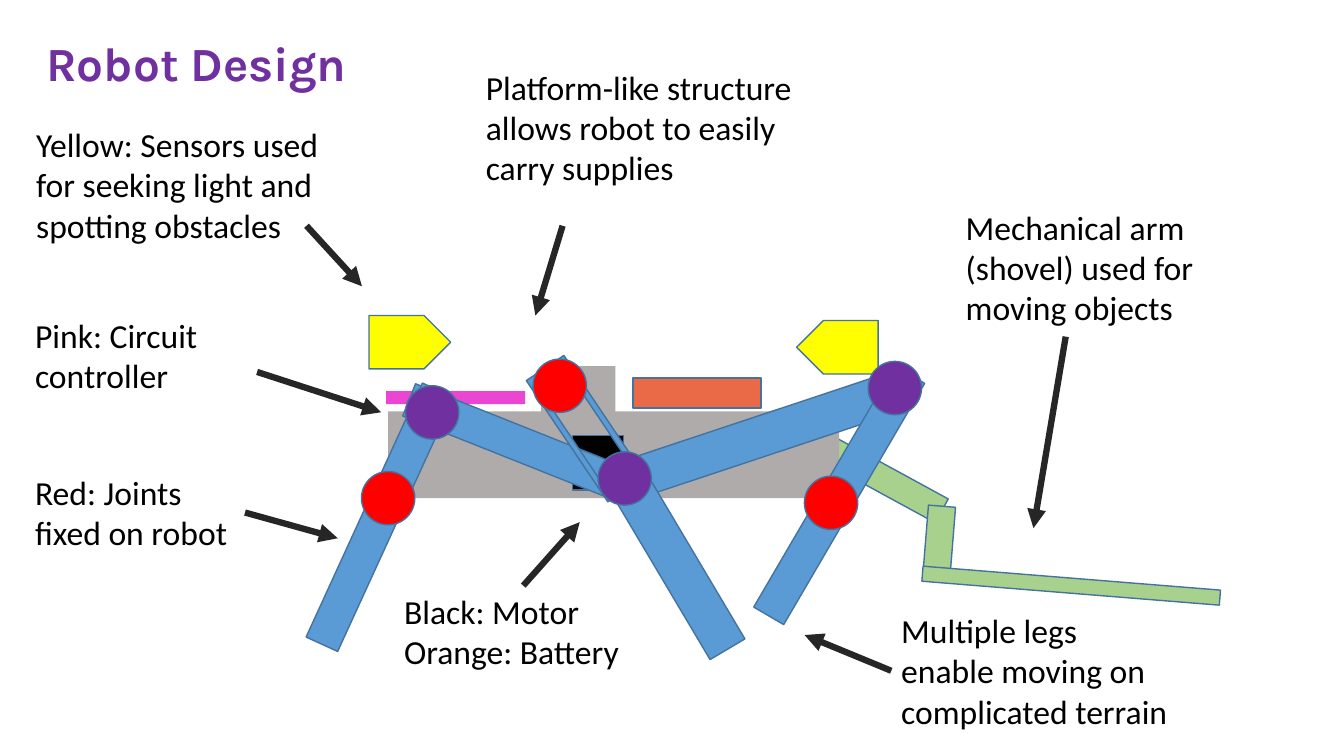
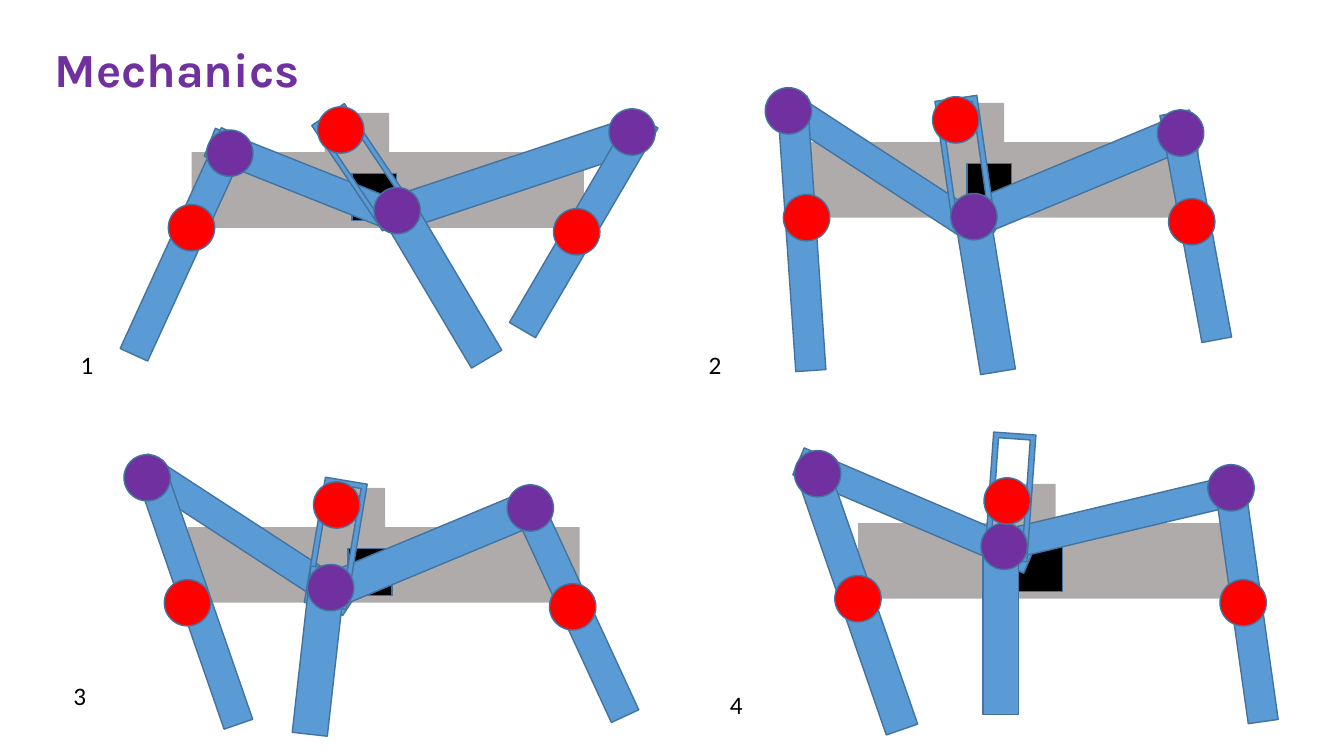
from lxml import etree
from pptx import Presentation
from pptx.dml.color import RGBColor
from pptx.enum.shapes import MSO_CONNECTOR, MSO_SHAPE
from pptx.enum.text import MSO_AUTO_SIZE, PP_ALIGN
from pptx.oxml.ns import qn
from pptx.util import Inches, Pt

COLORS = {
    "title": "7030A0", "text": "000000", "arrow": "262626", "outline": "43739E",
    "leg": "5B9BD5", "body": "AFABAB", "motor": "000000", "pivot": "7030A0",
    "joint": "FF0000", "sensor": "FFFF00", "controller": "EA46D3",
    "battery": "EA6946", "shovel": "A9D18E",
}
FORMATS = {
    "title": {"size": Pt(34), "name": "Karla", "bold": True},
    "label": {"size": Pt(24), "name": "Calibri"},
    "number": {"size": Pt(18), "name": "Calibri"},
}

# Robot measures, in inches from the top left corner of its body
BODY = (0, 0, 3.89, 0.75)
TOWER = (1.32, -0.39, 0.64, 0.51)
MOTOR = (1.59, 0.21, 0.44, 0.47)
FIXED_JOINTS = [(-0.23, 0.52), (3.59, 0.56), (1.25, -0.45)]
JOINT_SIZE = 0.46

# Each pose: limbs as (left, top, width, height, rotation), pivots as (left, top)
POSES = [
    {"left arm": (1.08, -0.81, 0.3, 2.26, 111.7),
     "right arm": (3.03, -0.94, 0.35, 2.32, 71.6),
     "slot": (1.51, -0.48, 0.39, 1.26, 326.1),
     "middle leg": (2.29, 0.37, 0.35, 1.81, 329.3), "hub": (1.81, 0.35),
     "right leg": (3.74, -0.48, 0.3, 2.41, 30.3), "right pivot": (4.14, -0.43),
     "left leg": (-0.22, -0.29, 0.3, 2.41, 24.6), "left pivot": (0.15, -0.22)},
    {"left arm": (0.63, -0.97, 0.29, 2.49, 123.1),
     "right arm": (2.43, -0.79, 0.35, 2.32, 67.4),
     "slot": (1.36, -0.44, 0.42, 1.26, 351.8),
     "middle leg": (1.59, 0.63, 0.35, 1.66, 350.7), "hub": (1.43, 0.51),
     "right leg": (3.71, -0.31, 0.3, 2.29, 349.5), "right pivot": (3.48, -0.32),
     "left leg": (-0.2, -0.45, 0.3, 2.72, 356.1), "left pivot": (-0.41, -0.54)},
    {"left arm": (0.43, -1.17, 0.29, 2.49, 123.1),
     "right arm": (2.17, -0.91, 0.35, 2.32, 67.4),
     "slot": (1.26, -0.47, 0.42, 1.26, 9.6),
     "middle leg": (1.13, 0.4, 0.35, 1.66, 6.4), "hub": (1.19, 0.37),
     "right leg": (3.71, -0.31, 0.3, 2.29, 335.2), "right pivot": (3.17, -0.42),
     "left leg": (-0.09, -0.69, 0.3, 2.72, 340.9), "left pivot": (-0.63, -0.72)},
    {"left arm": (0.41, -1.37, 0.29, 2.49, 113.1),
     "right arm": (2.43, -1.31, 0.3, 2.52, 76.6),
     "slot": (1.3, -0.89, 0.42, 1.26, 4.1),
     "middle leg": (1.24, 0.24, 0.35, 1.66, 0), "hub": (1.22, 0),
     "right leg": (3.71, -0.31, 0.3, 2.29, 352), "right pivot": (3.47, -0.58),
     "left leg": (-0.16, -0.52, 0.33, 2.64, 340.9), "left pivot": (-0.63, -0.72)},
]


def rgb(color):
    return RGBColor.from_string(COLORS[color])


class RobotDeck:
    """Holds the style and the current slide."""

    def __init__(self):
        self.presentation = Presentation()
        self.presentation.slide_width = Inches(13.33)
        self.presentation.slide_height = Inches(7.5)

    def add_slide(self, title, left, top, width):
        self.slide = self.presentation.slides.add_slide(self.presentation.slide_layouts[6])
        shape = self.text([title], left, top, width, 0.67, "title", "title")
        shape.text_frame.word_wrap = False
        shape.text_frame.paragraphs[0].alignment = PP_ALIGN.CENTER

    def text(self, lines, left, top, width, height, style="label", color="text"):
        shape = self.slide.shapes.add_textbox(*map(Inches, (left, top, width, height)))
        frame = shape.text_frame
        frame.word_wrap = True
        frame.auto_size = MSO_AUTO_SIZE.SHAPE_TO_FIT_TEXT
        for index, line in enumerate(lines):
            paragraph = frame.add_paragraph() if index else frame.paragraphs[0]
            run = paragraph.add_run()
            run.text = line
            for name, value in FORMATS[style].items():
                setattr(run.font, name, value)
            run.font.color.rgb = rgb(color)
        return shape

    def shape(self, kind, box, color, outlined=True, rotation=0, parent=None):
        shapes = (parent or self.slide).shapes
        shape = shapes.add_shape(kind, *map(Inches, box))
        shape.shadow.inherit = False
        shape.rotation = rotation
        shape.fill.solid()
        shape.fill.fore_color.rgb = rgb(color)
        if outlined:
            shape.line.color.rgb = rgb("outline")
            shape.line.width = Pt(1)
        else:
            shape.line.fill.background()
        return shape

    def arrow(self, start, end, label=None, side=None):
        connector = self.slide.shapes.add_connector(
            MSO_CONNECTOR.STRAIGHT, *map(Inches, start + end))
        if label is not None:
            connector.begin_connect(label, side)
        connector.line.color.rgb = rgb("arrow")
        connector.line.width = Pt(4.5)
        etree.SubElement(connector.line._get_or_add_ln(), qn("a:tailEnd"), type="triangle")
        etree.SubElement(connector._element.spPr, qn("a:effectLst"))

    def robot(self, pose, left, top, scale=1.0, group=None):
        group = group or self.slide.shapes.add_group_shape()

        def part(kind, box, color, outlined=True):
            x, y, width, height, *rotation = box
            placed = (left + x * scale, top + y * scale, width * scale, height * scale)
            self.shape(kind, placed, color, outlined, *rotation, parent=group)

        def joint(position, color):
            part(MSO_SHAPE.OVAL, position + (JOINT_SIZE, JOINT_SIZE), color)

        # Body and motor
        for box in (BODY, TOWER):
            part(MSO_SHAPE.RECTANGLE, box, "body", False)
        part(MSO_SHAPE.RECTANGLE, MOTOR, "motor")
        # Limbs and moving pivots, back to front
        for name, place in pose.items():
            if len(place) == 2:
                joint(place, "pivot")
            else:
                kind = MSO_SHAPE.FRAME if name == "slot" else MSO_SHAPE.RECTANGLE
                part(kind, place, "leg")
        # Joints fixed on the body
        for position in FIXED_JOINTS:
            joint(position, "joint")


def build_design(deck):
    deck.add_slide("Robot Design", 0.25, 0.29, 3.4)

    # Labels with their arrows; a side number joins the arrow to its label
    labels = [
        (["Red: Joints fixed on robot"], (0.25, 4.63, 2.18, 0.91),
         (2.44, 5.08), (3.35, 5.34), 3),
        (["Mechanical arm (shovel) used for moving objects"], (9.48, 2, 2.94, 1.31),
         (10.57, 3.34), (10.25, 5.24), None),
        (["Multiple legs enable moving on complicated terrain"], (8.84, 6, 2.91, 1.31),
         (8.84, 6.66), (7.98, 6.3), 1),
        (["Yellow: Sensors used for seeking light and spotting obstacles"],
         (0.26, 1.18, 3.12, 1.31), (3.04, 2.24), (3.59, 2.84), None),
        (["Black: Motor", "Orange: Battery"], (3.91, 5.81, 2.56, 0.91),
         (5.19, 5.81), (5.75, 5.18), 0),
        (["Pink: Circuit controller"], (0.25, 3.07, 2.13, 0.91),
         (2.55, 3.69), (3.78, 4.09), None),
        (["Platform-like structure allows robot to easily carry supplies"],
         (4.72, 0.61, 3.3, 1.31), (5.58, 2.24), (5.31, 3.13), None),
    ]
    for lines, box, start, end, side in labels:
        label = deck.text(lines, *box)
        deck.arrow(start, end, None if side is None else label, side)

    # Parts carried on the platform
    deck.shape(MSO_SHAPE.RECTANGLE, (3.83, 3.88, 1.38, 0.13), "controller", False)
    deck.shape(MSO_SHAPE.RECTANGLE, (6.28, 3.75, 1.27, 0.3), "battery")
    deck.shape(MSO_SHAPE.PENTAGON, (3.66, 3.13, 0.81, 0.53), "sensor")
    deck.shape(MSO_SHAPE.PENTAGON, (7.9, 3.18, 0.81, 0.53), "sensor", rotation=180)

    # Robot, with the shovel arm starting behind its body
    group = deck.slide.shapes.add_group_shape()
    deck.shape(MSO_SHAPE.RECTANGLE, (8.63, 4.1, 0.27, 1.31), "shovel",
               rotation=118.6, parent=group)
    deck.robot(POSES[0], 3.85, 4.08, 1.15, group)
    for box in [(8.96, 5.24, 0.71, 0.27), (10.55, 4.33, 0.15, 2.96)]:
        deck.shape(MSO_SHAPE.RECTANGLE, box, "shovel", rotation=274.6, parent=group)


def build_mechanics(deck):
    deck.add_slide("Mechanics", 0.42, 0.35, 2.67)

    # Four steps of the walk: body corner and number position
    steps = [
        ((1.9, 1.51), (0.7, 3.42)), ((8, 1.41), (6.93, 3.42)),
        ((1.86, 5.23), (0.63, 6.7)), ((8.51, 5.19), (7.14, 6.79)),
    ]
    for number, (pose, (body, label)) in enumerate(zip(POSES, steps), start=1):
        deck.robot(pose, *body)
        deck.text([str(number)], *label, 0.32, 0.4, "number")


def main():
    deck = RobotDeck()
    build_design(deck)
    build_mechanics(deck)
    deck.presentation.save("out.pptx")


if __name__ == "__main__":
    main()
